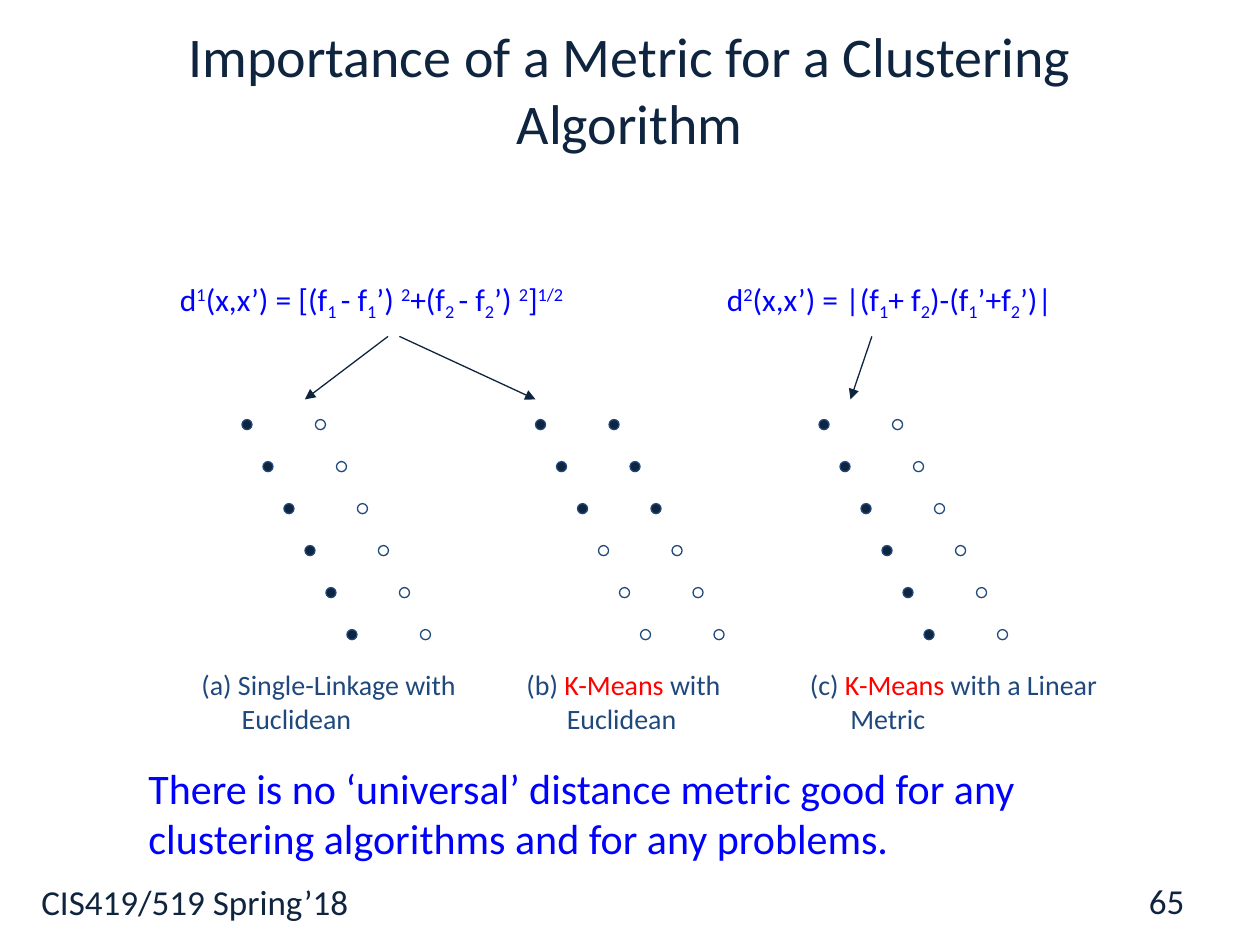
from lxml import etree
from pptx import Presentation
from pptx.dml.color import RGBColor
from pptx.enum import shapes, text
from pptx.oxml.ns import qn
from pptx.util import Inches, Pt

NAVY = RGBColor(0x0F, 0x24, 0x3E)
SLATE = RGBColor(0x1F, 0x49, 0x7D)
BLUE = RGBColor(0x00, 0x00, 0xFF)
RED = RGBColor(0xFF, 0x00, 0x00)
SUP, SUB = 30000, -25000

prs = Presentation()
prs.slide_width, prs.slide_height = Inches(10), Inches(7.5)
slide = prs.slides.add_slide(prs.slide_layouts[5])


def write(runs, at, size, color, box=None, align=text.PP_ALIGN.LEFT,
          anchor=text.MSO_ANCHOR.TOP, hanging=0):
    """Fill a box with (text, baseline, colour) runs; the last two may be left out."""
    left, top, width, height = [Inches(v) for v in at]
    if box is None:
        box = slide.shapes.add_textbox(left, top, width, height)
    else:
        box.left, box.top, box.width, box.height = left, top, width, height
    frame = box.text_frame
    frame.word_wrap = True
    frame.auto_size = text.MSO_AUTO_SIZE.NONE
    frame.vertical_anchor = anchor
    paragraph = frame.paragraphs[0]
    paragraph.alignment = align
    if hanging:
        properties = paragraph._p.get_or_add_pPr()
        properties.set("marL", str(Inches(hanging)))
        properties.set("indent", str(-Inches(hanging)))
    for words, baseline, run_color in [(*run, 0, None)[:3] if len(run) == 1
                                       else (*run, None)[:3] for run in runs]:
        run = paragraph.add_run()
        run.text = words
        run.font.name, run.font.size = "Calibri", Pt(size)
        run.font.color.rgb = run_color or color
        if baseline:
            run._r.get_or_add_rPr().set("baseline", str(baseline))


write([("Importance of a Metric for a Clustering Algorithm",)], (0.5, 0.08, 9, 1.25),
      32, NAVY, box=slide.shapes.title, align=text.PP_ALIGN.CENTER,
      anchor=text.MSO_ANCHOR.MIDDLE)

# Distance formulas
euclidean = [("d",), ("1", SUP), ("(x,x’) = [(f",), ("1 ", SUB), ("- f",), ("1", SUB),
             ("’) ",), ("2", SUP), ("+(f",), ("2 ", SUB), ("- f",), ("2", SUB),
             ("’) ",), ("2", SUP), ("]",), ("1/2", SUP)]
linear = [("d",), ("2", SUP), ("(x,x’) = |(f",), ("1", SUB), ("+ f",), ("2", SUB),
          (")-(f",), ("1", SUB), ("’+f",), ("2", SUB), ("’)|",)]
write(euclidean, (1.33, 2.17, 4.17, 0.4), 18, BLUE)
write(linear, (5.67, 2.17, 3.33, 0.4), 18, BLUE)

# Clusterings: left edge of the points, filled points in each column, caption
ROWS, DOT = 6, 0.08
clusterings = [
    (1.92, (6, 0), (1.5, 2.25), [("(a) Single-Linkage with Euclidean",)]),
    (4.25, (3, 3), (4.08, 2.42),
     [("(b) ",), ("K-Means", 0, RED), (" with Euclidean",)]),
    (6.5, (6, 0), (6.33, 2.5),
     [("(c) ",), ("K-Means", 0, RED), (" with a Linear Metric",)]),
]
for left, filled_counts, (caption_left, caption_width), caption in clusterings:
    points = slide.shapes.add_group_shape()
    for column, filled in enumerate(filled_counts):
        for row in range(ROWS):
            point = points.shapes.add_shape(
                shapes.MSO_SHAPE.OVAL,
                Inches(left + column * 7 / 12 + row / 6), Inches(3.33 + row / 3),
                Inches(DOT), Inches(DOT))
            point.shadow.inherit = False
            point.line.color.rgb = SLATE
            point.line.width = Pt(0.75)
            if row < filled:
                point.fill.solid()
                point.fill.fore_color.rgb = NAVY
            else:
                point.fill.background()
    write(caption, (caption_left, 5.25, caption_width, 0.64), 16, SLATE, hanging=0.32)

# Arrows from each formula to the clusterings that use it
for start, end in [(3.08, 2.42), (3.17, 4.25), (6.92, 6.75)]:
    arrow = slide.shapes.add_connector(
        shapes.MSO_CONNECTOR.STRAIGHT,
        Inches(start), Inches(2.67), Inches(end), Inches(3.17))
    arrow.line.color.rgb = NAVY
    arrow.line.width = Pt(0.75)
    etree.SubElement(arrow.line._get_or_add_ln(), qn("a:tailEnd"), type="triangle")
    etree.SubElement(arrow._element.spPr, qn("a:effectLst"))

write([("There is no ‘universal’ distance metric good for any clustering algorithms "
        "and for any problems.",)], (1.08, 6, 8.42, 0.91), 24, BLUE)

# Footer
write([("CIS419/519 Spring’18",)], (0.23, 6.94, 9.6, 0.56), 20, NAVY)
write([("65",)], (7.17, 6.95, 2.33, 0.4), 20, NAVY,
      align=text.PP_ALIGN.RIGHT, anchor=text.MSO_ANCHOR.MIDDLE)

prs.save("out.pptx")
